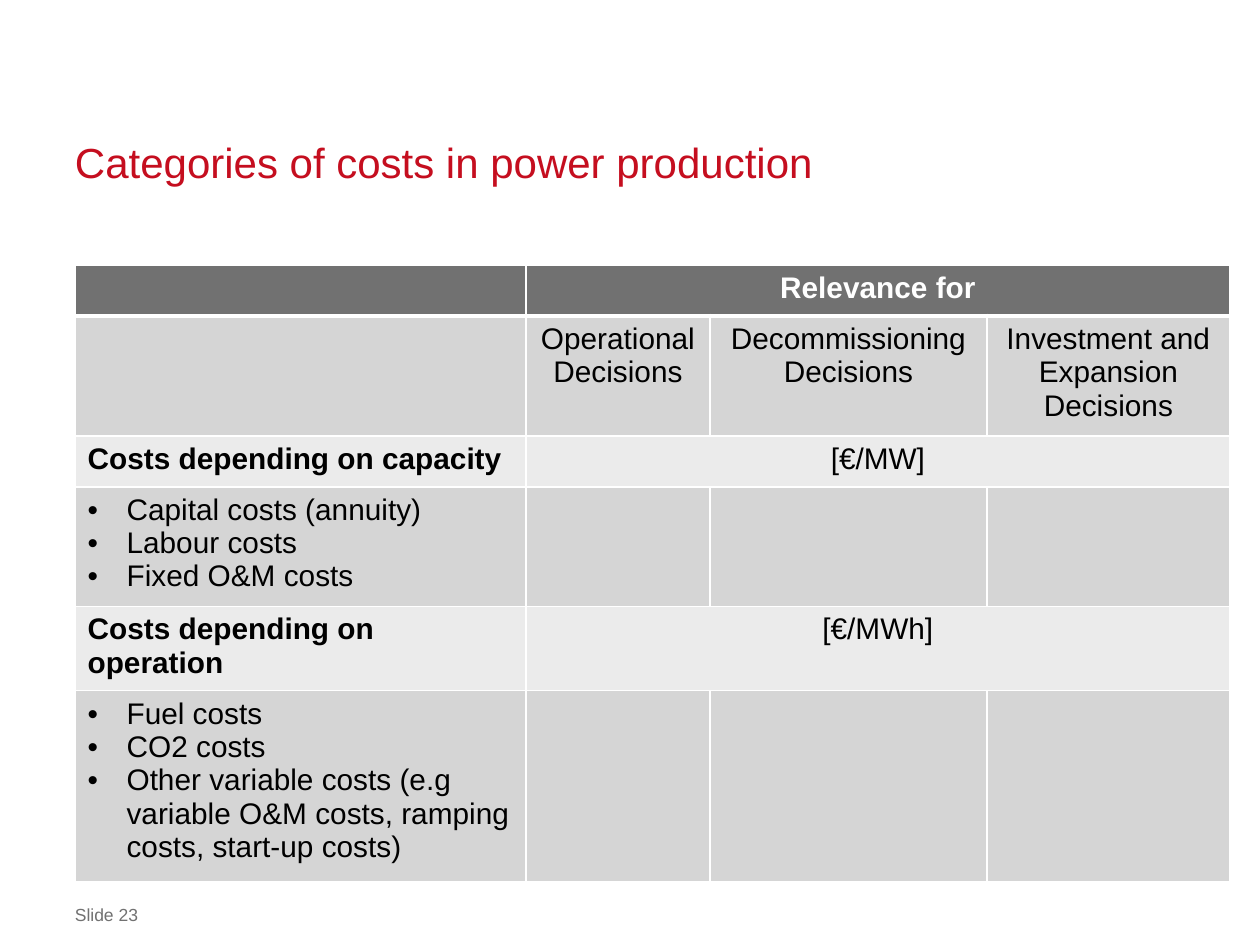
from lxml import etree
from pptx import Presentation
from pptx import util as u
from pptx.dml.color import RGBColor
from pptx.enum import text
from pptx.oxml.ns import qn

PX = 914400 // 126
FONT = "Arial"
RED = RGBColor(0xC5, 0x0E, 0x1F)
GREY = RGBColor(0x71, 0x71, 0x71)
MID_GREY = RGBColor(0xD5, 0xD5, 0xD5)
PALE_GREY = RGBColor(0xEB, 0xEB, 0xEB)
WHITE = RGBColor(0xFF, 0xFF, 0xFF)
BLACK = RGBColor(0, 0, 0)

LEFT = 75
COLUMNS = [451, 184, 277, 243]
ROW_HEIGHTS = [51, 113, 51, 113, 79, 179]
ROW_FILLS = [GREY, MID_GREY, PALE_GREY, MID_GREY, PALE_GREY, MID_GREY]
HEADINGS = {
    2: ("Costs depending on capacity", "[€/MW]"),
    4: ("Costs depending on operation", "[€/MWh]"),
}
COST_ITEMS = {
    3: ["Capital costs (annuity)", "Labour costs", "Fixed O&M costs"],
    5: ["Fuel costs", "CO2 costs",
        "Other variable costs (e.g variable O&M costs, ramping costs, start-up costs)"],
}
DECISIONS = ["Operational Decisions", "Decommissioning Decisions",
             "Investment and Expansion Decisions"]


def px(length):
    return u.Emu(length * PX)


def add_run(paragraph, words, size, color, bold=False):
    run = paragraph.add_run()
    run.text = words
    run.font.name = FONT
    run.font.size = u.Pt(size)
    run.font.bold = bold
    run.font.color.rgb = color


def add_label(slide, box, words, size, color, bottom_inset=0):
    frame = slide.shapes.add_textbox(*map(px, box)).text_frame
    frame.word_wrap = True
    frame.margin_left = frame.margin_right = frame.margin_top = 0
    frame.margin_bottom = px(bottom_inset)
    add_run(frame.paragraphs[0], words, size, color)
    return frame


def set_borders(cell, top, bottom):
    """Draw white cell borders, with top and bottom widths in points."""
    properties = cell._tc.get_or_add_tcPr()
    for side, width in (("L", 1), ("R", 1), ("T", top), ("B", bottom)):
        line = etree.SubElement(properties, qn(f"a:ln{side}"), w=str(u.Pt(width)))
        fill = etree.SubElement(line, qn("a:solidFill"))
        etree.SubElement(fill, qn("a:srgbClr"), val=str(WHITE))


def write_cell(cell, words, color=BLACK, bold=False, align=text.PP_ALIGN.CENTER):
    paragraph = cell.text_frame.paragraphs[0]
    paragraph.alignment = align
    add_run(paragraph, words, 17, color, bold)


def write_bullets(cell, items):
    frame = cell.text_frame
    for index, item in enumerate(items):
        paragraph = frame.add_paragraph() if index else frame.paragraphs[0]
        properties = paragraph._p.get_or_add_pPr()
        properties.set("marL", str(px(39)))
        properties.set("indent", str(-px(39)))
        etree.SubElement(properties, qn("a:buFont"), typeface=FONT)
        etree.SubElement(properties, qn("a:buChar"), char="•")
        add_run(paragraph, item, 17, BLACK)


def add_cost_table(slide):
    table = slide.shapes.add_table(
        len(ROW_HEIGHTS), len(COLUMNS), px(LEFT), px(265),
        px(sum(COLUMNS)), px(sum(ROW_HEIGHTS))).table
    for column, width in zip(table.columns, COLUMNS):
        column.width = px(width)
    for index, (height, color) in enumerate(zip(ROW_HEIGHTS, ROW_FILLS)):
        table.rows[index].height = px(height)
        for cell in table.rows[index].cells:
            set_borders(cell, top=3 if index == 1 else 1, bottom=3 if index == 0 else 1)
            cell.fill.solid()
            cell.fill.fore_color.rgb = color
    for row in (0, *HEADINGS):
        table.cell(row, 1).merge(table.cell(row, 3))

    write_cell(table.cell(0, 1), "Relevance for", WHITE, bold=True)
    for column, decision in enumerate(DECISIONS, start=1):
        write_cell(table.cell(1, column), decision)
    for row, (heading, unit) in HEADINGS.items():
        write_cell(table.cell(row, 0), heading, bold=True, align=text.PP_ALIGN.LEFT)
        write_cell(table.cell(row, 1), unit)
    for row, items in COST_ITEMS.items():
        write_bullets(table.cell(row, 0), items)


def main():
    deck = Presentation()
    deck.slide_width, deck.slide_height = px(1260), px(945)
    slide = deck.slides.add_slide(deck.slide_layouts[6])
    title = add_label(slide, (LEFT, 137, 1111, 102),
                      "Categories of costs in power production", 24, RED, bottom_inset=52)
    title.vertical_anchor = text.MSO_ANCHOR.BOTTOM
    title.paragraphs[0].line_spacing = u.Pt(30)
    add_label(slide, (LEFT, 904, 912, 21), "Slide 23", 10, GREY)
    add_cost_table(slide)
    deck.save("out.pptx")


if __name__ == "__main__":
    main()
